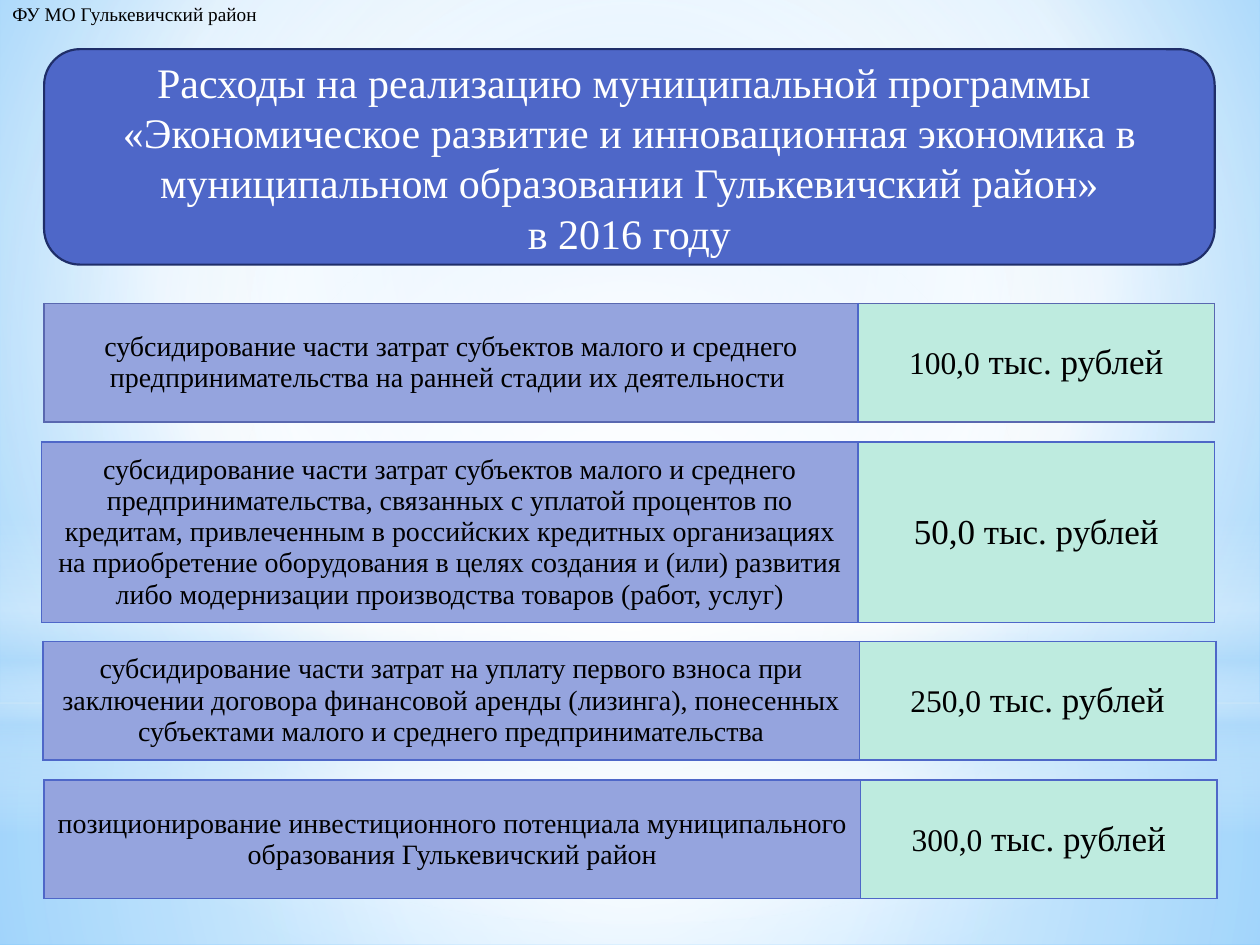
"""Build the slide on spending for the district's economic development programme."""
from dataclasses import dataclass

from lxml.etree import SubElement
from pptx import Presentation
from pptx.dml.color import RGBColor
from pptx.enum.shapes import MSO_SHAPE
from pptx.enum.text import MSO_ANCHOR, MSO_AUTO_SIZE, PP_ALIGN
from pptx.oxml import parse_xml
from pptx.oxml.ns import nsdecls, qn
from pptx.util import Inches, Pt


@dataclass(frozen=True)
class Theme:
    font: str = "Times New Roman"
    ink: str = "000000"
    white: str = "FFFFFF"
    accent: str = "4E67C8"
    title_line: str = "1F2E69"
    purpose: str = "95A4DE"
    amount: str = "BEEBDF"
    muted_line: str = "5968B0"
    sky: str = "9ED5FF"
    deep_sky: str = "5BB9FF"
    mist: str = "B4DCFA"
    note_size: int = 11
    purpose_size: int = 16
    number_size: int = 18
    unit_size: int = 20
    title_size: int = 24


theme = Theme()


def write(paragraph, text, size, color=theme.ink, align=PP_ALIGN.CENTER):
    paragraph.alignment = align
    run = paragraph.add_run()
    run.text = text
    run.font.name = theme.font
    run.font.size = Pt(size)
    run.font.bold = False
    run.font.color.rgb = RGBColor.from_string(color)


def paint_gradient(fill, owner, stops, focus=None):
    fill.gradient()
    gradient = owner.xpath(".//a:gradFill")[0]
    stop_xml = "".join(
        f'<a:gs pos="{position * 1000}"><a:srgbClr val="{color}">'
        f'<a:alpha val="{opacity * 1000}"/></a:srgbClr></a:gs>'
        for position, color, opacity in stops)
    if focus:
        sides = " ".join(f'{side}="{value * 1000}"' for side, value in zip("ltrb", focus))
        direction = f'<a:path path="circle"><a:fillToRect {sides}/></a:path>'
    else:
        direction = '<a:lin ang="5400000" scaled="0"/>'
    gradient.getparent().replace(gradient, parse_xml(
        f'<a:gradFill {nsdecls("a")} rotWithShape="1">'
        f'<a:gsLst>{stop_xml}</a:gsLst>{direction}</a:gradFill>'))


deck = Presentation()
deck.slide_width, deck.slide_height = Inches(10), Inches(7.5)
slide = deck.slides.add_slide(deck.slide_layouts[5])
paint_gradient(slide.background.fill, slide._element,
               [(0, theme.sky, 100), (60, theme.white, 100), (100, theme.deep_sky, 100)],
               (20, 10, 20, 60))

centre = (50, 50, 50, 50)
glows = [
    (MSO_SHAPE.RECTANGLE, 5.58, 1.92, centre,
     [(0, theme.white, 91), (37, theme.white, 76), (100, theme.mist, 79)]),
    (MSO_SHAPE.RECTANGLE, 0, 5.58, centre,
     [(0, theme.white, 89), (48, theme.white, 62), (100, theme.mist, 79)]),
    (MSO_SHAPE.RECTANGLE, 4.12, 2.5, None,
     [(0, theme.white, 0), (29, theme.white, 30), (45, theme.mist, 40),
      (55, theme.white, 26), (65, theme.mist, 60), (100, theme.white, 0)]),
    (MSO_SHAPE.OVAL, 1.75, 5.58, centre,
     [(0, theme.white, 100), (56, theme.white, 0)]),
]
for outline, top, height, focus, stops in glows:
    glow = slide.shapes.add_shape(outline, 0, Inches(top), Inches(10), Inches(height))
    glow.shadow.inherit = False
    glow.line.fill.background()
    paint_gradient(glow.fill, glow._element, stops, focus)

department = slide.shapes.add_textbox(0, Inches(-0.03), Inches(2.18), Inches(0.29))
department.text_frame.word_wrap = False
write(department.text_frame.paragraphs[0], "ФУ МО Гулькевичский район",
      theme.note_size, align=PP_ALIGN.LEFT)

title_place = Inches(0.35), Inches(0.39), Inches(9.29), Inches(1.71)
title_panel = slide.shapes.add_shape(MSO_SHAPE.ROUNDED_RECTANGLE, *title_place)
title_panel.shadow.inherit = False
title_panel.fill.solid()
title_panel.fill.fore_color.rgb = RGBColor.from_string(theme.accent)
title_panel.line.color.rgb = RGBColor.from_string(theme.title_line)
title_panel.line.width = Pt(1.25)

title = slide.shapes.title
title.left, title.top, title.width, title.height = title_place
slide.shapes._spTree.append(title._element)
heading = title.text_frame
heading.word_wrap = True
heading.auto_size = MSO_AUTO_SIZE.NONE
heading.vertical_anchor = MSO_ANCHOR.MIDDLE
title_lines = [
    "Расходы на реализацию муниципальной программы ",
    "«Экономическое развитие и инновационная экономика в "
    "муниципальном образовании Гулькевичский район»",
    "в 2016 году",
]
for index, line in enumerate(title_lines):
    paragraph = heading.add_paragraph() if index else heading.paragraphs[0]
    paragraph.line_spacing = 1.0
    write(paragraph, line, theme.title_size, theme.white)

amount_width = 2.83
expenses = [
    (0.35, 2.41, 6.46, 0.94, theme.muted_line, theme.number_size, "100,0",
     "субсидирование части затрат субъектов малого и среднего "
     "предпринимательства на ранней стадии их деятельности "),
    (0.33, 3.51, 6.48, 1.43, theme.accent, theme.unit_size, "50,0",
     "субсидирование части затрат субъектов малого и среднего "
     "предпринимательства, связанных с уплатой процентов по кредитам, "
     "привлеченным в российских кредитных организациях на приобретение "
     "оборудования в целях создания и (или) развития либо модернизации "
     "производства товаров (работ, услуг)"),
    (0.34, 5.09, 6.48, 0.94, theme.accent, theme.number_size, "250,0",
     "субсидирование части затрат на уплату первого взноса при заключении "
     "договора финансовой аренды (лизинга), понесенных субъектами малого и "
     "среднего предпринимательства"),
    (0.35, 6.19, 6.48, 0.94, theme.accent, theme.number_size, "300,0",
     "позиционирование инвестиционного потенциала муниципального "
     "образования Гулькевичский район"),
]
for left, top, purpose_width, height, border, number_size, number, purpose in expenses:
    table = slide.shapes.add_table(
        1, 2, Inches(left), Inches(top),
        Inches(purpose_width + amount_width), Inches(height)).table
    table.first_row = table.horz_banding = False
    table.columns[0].width = Inches(purpose_width)
    table.columns[1].width = Inches(amount_width)
    purpose_cell, amount_cell = table.rows[0].cells
    write(purpose_cell.text_frame.paragraphs[0], purpose, theme.purpose_size)
    amount = amount_cell.text_frame.paragraphs[0]
    write(amount, number, number_size)
    write(amount, " тыс. рублей", theme.unit_size)
    for cell, color, inner_side in ((purpose_cell, theme.purpose, "R"),
                                    (amount_cell, theme.amount, "L")):
        cell.vertical_anchor = MSO_ANCHOR.MIDDLE
        cell.fill.solid()
        cell.fill.fore_color.rgb = RGBColor.from_string(color)
        properties = cell._tc.get_or_add_tcPr()
        for position, side in enumerate("LRTB"):
            edge = SubElement(properties, qn(f"a:ln{side}"), w=str(Pt(1)))
            paint = SubElement(edge, qn("a:solidFill"))
            SubElement(paint, qn("a:srgbClr"),
                       val=theme.accent if side == inner_side else border)
            properties.insert(position, edge)

deck.save("out.pptx")
